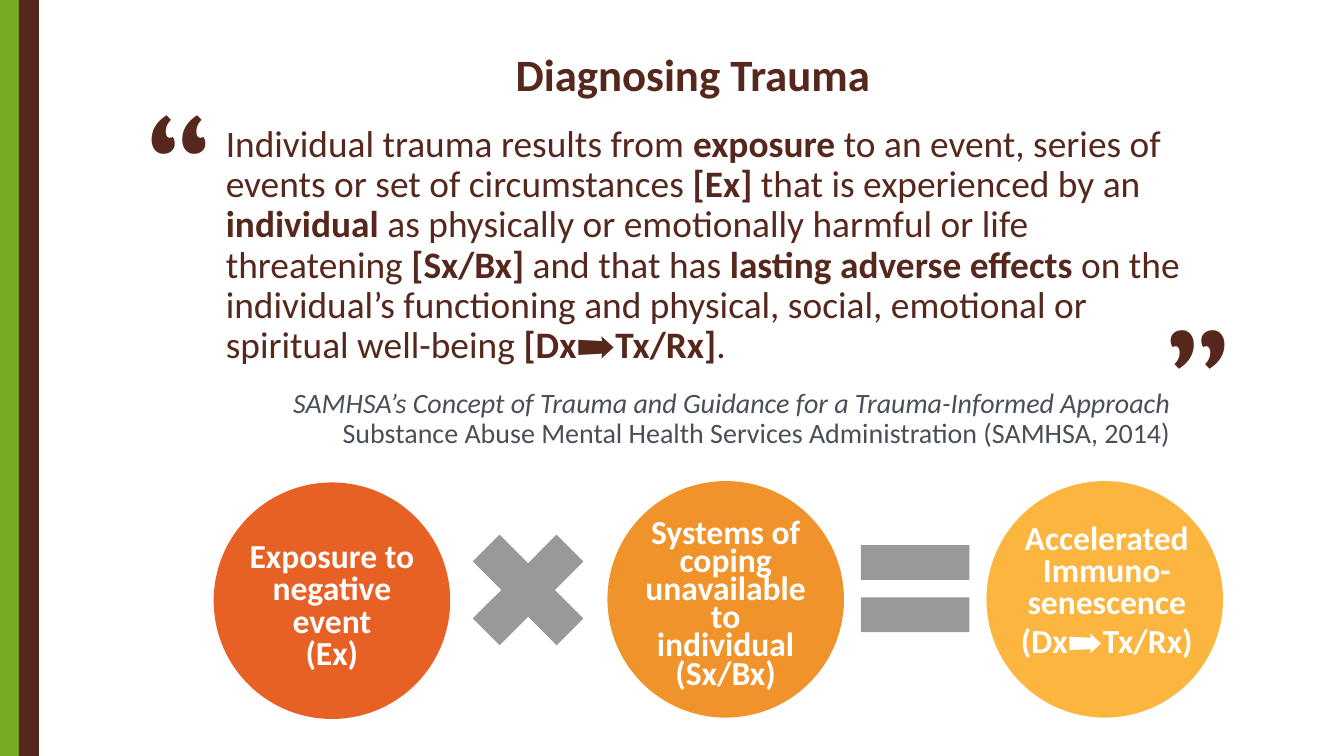
from pptx import Presentation
from pptx.dml.color import RGBColor
from pptx.enum.shapes import MSO_SHAPE
from pptx.enum.text import MSO_ANCHOR, MSO_AUTO_SIZE, PP_ALIGN
from pptx.oxml.ns import qn
from pptx.util import Inches, Pt

GREEN = RGBColor(0x77, 0xAB, 0x21)
BROWN = RGBColor(0x56, 0x27, 0x1C)
SLATE = RGBColor(0x48, 0x4F, 0x56)
WHITE = RGBColor(0xFF, 0xFF, 0xFF)
GRAY = RGBColor(0x99, 0x99, 0x99)
RED_ORANGE = RGBColor(0xE7, 0x61, 0x25)
ORANGE = RGBColor(0xF1, 0x93, 0x2B)
YELLOW = RGBColor(0xFC, 0xB5, 0x3E)

SLIDE_WIDTH = 10
SLIDE_HEIGHT = SLIDE_WIDTH * 9 / 16
CIRCLE_SIZE = 1.76

# Bold and regular stretches alternate, starting with regular.
DEFINITION = [
    "Individual trauma results from ", "exposure",
    " to an event, series of events or set of circumstances ", "[Ex]",
    " that is experienced by an ", "individual ",
    "as physically or emotionally harmful or life threatening ", "[Sx/Bx]",
    " and that has ", "lasting adverse effects",
    " on the individual’s functioning and physical, social, emotional or "
    "spiritual well-being ", "[Dx➡Tx/Rx]", ".",
]
SOURCE_TITLE = "SAMHSA’s Concept of Trauma and Guidance for a Trauma-Informed Approach "
SOURCE_AUTHOR = "Substance Abuse Mental Health Services Administration (SAMHSA, 2014)"


def place(sp, left, top, width, height):
    sp.left, sp.top = Inches(left), Inches(top)
    sp.width, sp.height = Inches(width), Inches(height)


def set_frame(tf, anchor, top=0, bottom=0):
    tf.word_wrap = True
    tf.auto_size = MSO_AUTO_SIZE.NONE
    tf.vertical_anchor = anchor
    tf.margin_left = tf.margin_right = 0
    tf.margin_top, tf.margin_bottom = Inches(top), Inches(bottom)


def format_paragraph(p, align, spacing, before=0):
    p.alignment = align
    p.line_spacing = spacing
    p.space_before = Pt(before)


def format_run(r, size, color, bold=False, italic=False, name="Calibri"):
    r.font.name = name
    r.font.size = Pt(size)
    r.font.bold = bold
    r.font.italic = italic
    r.font.color.rgb = color


def add_run(p, text, *args, **kwargs):
    r = p.add_run()
    r.text = text
    format_run(r, *args, **kwargs)


def remove_bullet(p, right=0):
    """Drop the bullet and its indent; right is the right margin in inches."""
    pPr = p._p.get_or_add_pPr()
    pPr.set("marL", "0")
    pPr.set("marR", str(Inches(right)))
    pPr.set("indent", "0")
    pPr.append(pPr.makeelement(qn("a:buNone"), {}))


def add_filled(s, kind, left, top, width, height, color, adjustments=()):
    sp = s.shapes.add_shape(kind, Inches(left), Inches(top), Inches(width), Inches(height))
    sp.shadow.inherit = False
    sp.fill.solid()
    sp.fill.fore_color.rgb = color
    sp.line.fill.background()
    for i, value in enumerate(adjustments):
        sp.adjustments[i] = value
    return sp


def add_text_box(s, left, top, width, height, anchor):
    sp = s.shapes.add_textbox(Inches(left), Inches(top), Inches(width), Inches(height))
    set_frame(sp.text_frame, anchor)
    return sp


def add_circle(s, left, top, color):
    return add_filled(s, MSO_SHAPE.OVAL, left, top, CIRCLE_SIZE, CIRCLE_SIZE, color)


def write_label(tf, lines, spacings, before=0):
    """Write centred white paragraphs; before is the gap above the last one."""
    for i, (line, spacing) in enumerate(zip(lines, spacings)):
        p = tf.add_paragraph() if i else tf.paragraphs[0]
        p.text = line
        format_paragraph(p, PP_ALIGN.CENTER, spacing, before if i else 0)
        for r in p.runs:
            format_run(r, 18, WHITE, bold=True)


def add_quote_mark(s, left, top, width, rotation=0):
    sp = add_text_box(s, left, top, width, 0.75, MSO_ANCHOR.TOP)
    sp.rotation = rotation
    p = sp.text_frame.paragraphs[0]
    p.alignment = PP_ALIGN.CENTER
    add_run(p, "“", 100, BROWN, name="Cambria")


def fill_title(title):
    place(title, 1.68, 0.23, 6.95, 0.52)
    set_frame(title.text_frame, MSO_ANCHOR.BOTTOM)
    p = title.text_frame.paragraphs[0]
    format_paragraph(p, PP_ALIGN.CENTER, 0.9)
    add_run(p, "Diagnosing Trauma", 24, BROWN, bold=True)


def fill_body(body):
    place(body, 1.68, 0.93, 7.33, 2.57)
    tf = body.text_frame
    set_frame(tf, MSO_ANCHOR.TOP)
    p = tf.paragraphs[0]
    format_paragraph(p, PP_ALIGN.LEFT, 0.9)
    remove_bullet(p)
    for i, text in enumerate(DEFINITION):
        add_run(p, text, 20, BROWN, bold=i % 2 == 1)

    p = tf.add_paragraph()
    format_paragraph(p, PP_ALIGN.RIGHT, 0.9, 12)
    remove_bullet(p, right=0.3)
    add_run(p, SOURCE_TITLE, 15, SLATE, italic=True)
    add_run(p, SOURCE_AUTHOR, 15, SLATE)


def add_equation(s):
    factors = [
        (1.59, 3.59, RED_ORANGE, ["Exposure to negative event", "(Ex)"], 0.8),
        (4.52, 3.58, ORANGE, ["Systems of coping unavailable to individual", "(Sx/Bx)"], 0.7),
    ]
    for left, top, color, lines, spacing in factors:
        tf = add_circle(s, left, top, color).text_frame
        set_frame(tf, MSO_ANCHOR.MIDDLE, 0.2, 0.1)
        write_label(tf, lines, [spacing] * 2)

    # The result label is wider than the text area inside a circle.
    add_circle(s, 7.34, 3.58, YELLOW)
    label = add_text_box(s, 7.39, 3.5, 1.69, 1.82, MSO_ANCHOR.MIDDLE)
    write_label(label.text_frame, ["Accelerated Immuno-\nsenescence", "(Dx➡Tx/Rx)"],
                [0.8, 0.9], before=2)

    add_filled(s, MSO_SHAPE.MATH_MULTIPLY, 3.33, 3.79, 1.2, 1.2, GRAY, [0.235])
    add_filled(s, MSO_SHAPE.MATH_EQUAL, 6.26, 3.83, 1.1, 1.1, GRAY, [0.235, 0.118])


def main():
    prs = Presentation()
    prs.slide_width, prs.slide_height = Inches(SLIDE_WIDTH), Inches(SLIDE_HEIGHT)
    s = prs.slides.add_slide(prs.slide_layouts[1])
    for left, color in ((0, GREEN), (0.14, BROWN)):
        add_filled(s, MSO_SHAPE.RECTANGLE, left, 0, 0.15, SLIDE_HEIGHT, color)
    fill_title(s.shapes.title)
    fill_body(s.placeholders[1])
    add_equation(s)
    add_quote_mark(s, 0.97, 0.41, 0.71)
    add_quote_mark(s, 8.56, 2.45, 0.72, rotation=180)
    prs.save("out.pptx")


if __name__ == "__main__":
    main()
